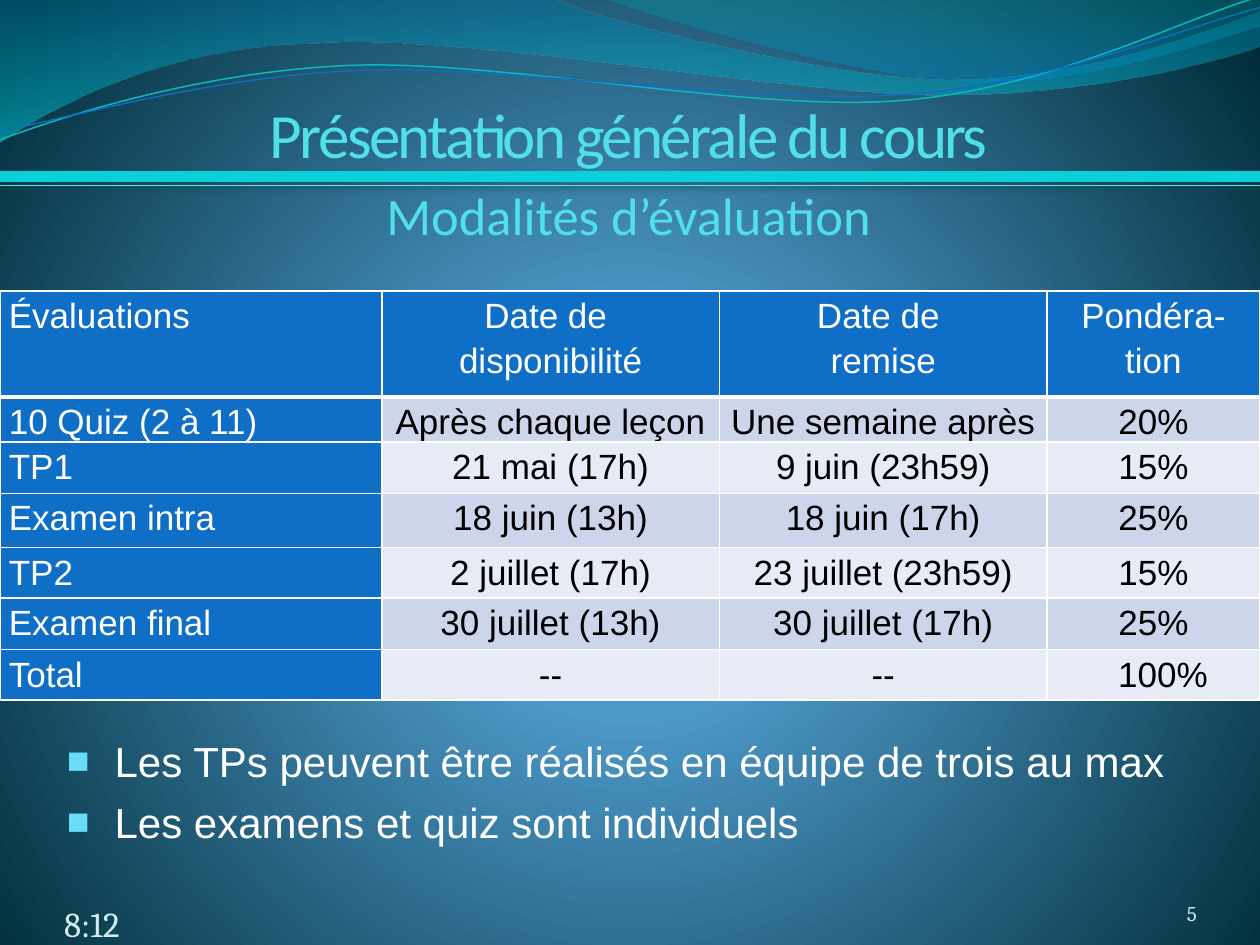
from lxml.etree import SubElement
from pptx import Presentation
from pptx.dml.color import RGBColor
from pptx.enum.shapes import MSO_CONNECTOR
from pptx.enum.text import MSO_ANCHOR, MSO_AUTO_SIZE, PP_ALIGN
from pptx.oxml.ns import qn
from pptx.util import Inches, Pt

WHITE = RGBColor(0xFF, 0xFF, 0xFF)
BLACK = RGBColor(0, 0, 0)
BLUE = RGBColor(0x0F, 0x6F, 0xC6)
BAND_DARK = RGBColor(0xCC, 0xD5, 0xEA)
BAND_LIGHT = RGBColor(0xE7, 0xEB, 0xF5)
HEADING = RGBColor(0x51, 0xE0, 0xEA)
FOOTER = RGBColor(0xD1, 0xEA, 0xEE)
BULLET = RGBColor(0x6B, 0xDB, 0xFA)
TURQUOISE = RGBColor(0x0B, 0xD0, 0xD9)
PALE_TURQUOISE = RGBColor(0x77, 0xD9, 0xE8)
WAVE_TEAL = RGBColor(0x0A, 0xB8, 0xBF)
RULE_SHADOW = RGBColor(0x02, 0x4B, 0x4E)
BACKGROUND = [(0, RGBColor(0x4A, 0xA0, 0xD6), 100), (25, RGBColor(0x4C, 0x98, 0xC7), 100),
              (100, RGBColor(0x00, 0x2C, 0x38), 100)]
LEFT_WAVE = [(0, RGBColor(0x00, 0x74, 0xA1), 45), (100, RGBColor(0x00, 0xC6, 0xCF), 55)]
RIGHT_WAVE = [(0, RGBColor(0x00, 0xA1, 0xA9), 30), (80, RGBColor(0x00, 0x8B, 0xBF), 45)]

ROWS = [
    ["Évaluations", "Date de \ndisponibilité", "Date de \nremise", "Pondéra-tion"],
    ["10 Quiz (2 à 11)", "Après chaque leçon", "Une semaine après", "20%"],
    ["TP1", "21 mai (17h)", "9 juin (23h59)", "15%"],
    ["Examen intra", "18 juin (13h)", "18 juin (17h)", "25%"],
    ["TP2", "2 juillet (17h)", "23 juillet (23h59)", "15%"],
    ["Examen final", "30 juillet (13h)", "30 juillet (17h)", "25%"],
    ["Total", "--", "--", "100%"],
]
COLUMN_WIDTHS = [3.03, 2.68, 2.6, 1.69]
ROW_HEIGHTS = [0.84, 0.35, 0.41, 0.43, 0.4, 0.41, 0.4]
RULES = ["Les TPs peuvent être réalisés en équipe de trois au max",
         "Les examens et quiz sont individuels"]


def add_node(parent, tag, **attributes):
    return SubElement(parent, qn(tag), {key: str(value) for key, value in attributes.items()})


def add_color(parent, color, opacity=100):
    node = add_node(parent, "a:srgbClr", val=color)
    if opacity < 100:
        add_node(node, "a:alpha", val=opacity * 1000)


def set_gradient(owner, element, stops, radial=False):
    """Fill owner with (position, colour, opacity) stops, top to bottom or radial."""
    owner.fill.gradient()
    gradient = element.find(".//" + qn("a:gradFill"))
    for child in list(gradient):
        gradient.remove(child)
    stop_list = add_node(gradient, "a:gsLst")
    for position, color, opacity in stops:
        add_color(add_node(stop_list, "a:gs", pos=position * 1000), color, opacity)
    if radial:
        circle = add_node(gradient, "a:path", path="circle")
        add_node(circle, "a:fillToRect", l=10000, t=110000, r=10000, b=100000)
    else:
        add_node(gradient, "a:lin", ang=5400000, scaled=0)


def add_outline(page, box, steps, close):
    """Draw a start point, then line ends (2 numbers) and cubic curves (6 numbers)."""
    left, top = box[:2]
    points = [(Inches(left + step[i]), Inches(top + step[i + 1]))
              for step in steps for i in range(0, len(step), 2)]
    builder = page.shapes.build_freeform(*points[0])
    builder.add_line_segments(points[1:], close=close)
    shape = builder.convert_to_shape()
    shape.shadow.inherit = False
    segments = iter(shape.element.findall(".//" + qn("a:lnTo")))
    for step in steps[1:]:
        curve = next(segments)
        if len(step) == 6:
            bezier = add_node(curve.getparent(), "a:cubicBezTo")
            curve.addprevious(bezier)
            for segment in (curve, next(segments), next(segments)):
                bezier.append(segment[0])
                segment.getparent().remove(segment)
    return shape


def add_waves(page, box):
    areas = [
        (LEFT_WAVE, [(0, 0), (4.4, -0.01), (4.76, 0.17, 6.64, 0.63, 7.58, 0.63),
                     (8.53, 0.63, 9.58, 0.26, 10, 0.09), (10.01, 0.36),
                     (9.83, 0.44, 8.7, 0.76, 7.46, 0.75), (6.22, 0.75, 3.82, 0.28, 2.57, 0.34),
                     (1.29, 0.36, 0.46, 0.83, -0.01, 1.13)]),
        (RIGHT_WAVE, [(4.79, -0.01), (5.09, 0.11, 6.82, 0.62, 7.69, 0.65),
                      (8.56, 0.69, 9.61, 0.32, 10, 0.21), (10, 0)]),
    ]
    for stops, steps in areas:
        shape = add_outline(page, box, steps, True)
        set_gradient(shape, shape.element, stops)
        shape.line.fill.background()
    strands = [
        (WAVE_TEAL, 0.85, [(0, 1.11), (0.48, 0.93, 1.58, 0.57, 2.77, 0.52),
                           (3.95, 0.47, 5.93, 0.89, 7.13, 0.8),
                           (8.33, 0.71, 9.38, 0.15, 9.98, -0.02)]),
        (BLUE, 0.75, [(0, 1.04), (0.47, 0.96, 1.64, 0.61, 2.83, 0.56),
                      (4.03, 0.51, 5.97, 0.84, 7.17, 0.75),
                      (8.36, 0.67, 9.41, 0.21, 10, 0.06)]),
    ]
    for color, width, steps in strands:
        shape = add_outline(page, box, steps, False)
        shape.fill.background()
        shape.line.color.rgb = color
        shape.line.width = Pt(width)


def add_rule(page, box, color, width, shadow=False):
    left, top, length = box
    line = page.shapes.add_connector(MSO_CONNECTOR.STRAIGHT, Inches(left), Inches(top),
                                     Inches(left + length), Inches(top))
    line.line.color.rgb = color
    line.line.width = Pt(width)
    effects = add_node(line.element.spPr, "a:effectLst")
    if shadow:
        outer = add_node(effects, "a:outerShdw", blurRad=Pt(4.5), dist=Pt(3), dir=5400000)
        add_color(outer, RULE_SHADOW, 48)


def place(shape, box, **frame_format):
    for name, value in zip(("left", "top", "width", "height"), box):
        setattr(shape, name, Inches(value))
    values = {"word_wrap": True, "auto_size": MSO_AUTO_SIZE.NONE, **frame_format}
    for name, value in values.items():
        setattr(shape.text_frame, name, value)


def style(para, font, size, color, **para_format):
    for span in para.runs:
        for name, value in {"name": font, "size": Pt(size), "bold": False}.items():
            setattr(span.font, name, value)
        span.font.color.rgb = color
    for name, value in para_format.items():
        setattr(para, name, value)


def add_label(shape, box, text, font, size, color, align, right=0):
    """Write one bottom-anchored line in a text box or title placeholder."""
    place(shape, box, vertical_anchor=MSO_ANCHOR.BOTTOM, margin_left=0, margin_top=0,
          margin_right=Inches(right), margin_bottom=0)
    para = shape.text_frame.paragraphs[0]
    span = para.add_run()
    span.text = text
    style(para, font, size, color, alignment=align)
    return span


def add_text_box(page):
    return page.shapes.add_textbox(0, 0, 0, 0)


def fill_list(body, box, items):
    place(body, box, vertical_anchor=MSO_ANCHOR.BOTTOM, margin_bottom=Inches(0.39))
    body.text_frame.text = "\n".join(items)
    for index, para in enumerate(body.text_frame.paragraphs):
        style(para, "Arial", 24, WHITE, space_before=Pt(6 if index else 0))
        properties = para._p.get_or_add_pPr()
        properties.set("marL", str(Inches(0.38)))
        properties.set("indent", str(Inches(-0.38)))
        add_color(add_node(properties, "a:buClr"), BULLET)
        add_node(properties, "a:buSzPct", val=90000)
        add_node(properties, "a:buFont", typeface="Arial")
        add_node(properties, "a:buChar", char="■")


def set_borders(cell, row):
    properties = cell._tc.get_or_add_tcPr()
    widths = {"L": 1, "R": 1, "T": 3 if row == 1 else 1, "B": 3 if row == 0 else 1}
    for index, (side, width) in enumerate(widths.items()):
        border = add_node(properties, "a:ln" + side, w=Pt(width))
        add_color(add_node(border, "a:solidFill"), WHITE)
        properties.insert(index, border)


def add_schedule(page, box):
    table = page.shapes.add_table(len(ROWS), len(COLUMN_WIDTHS), *map(Inches, box)).table
    for column, width in zip(table.columns, COLUMN_WIDTHS):
        column.width = Inches(width)
    for r, (height, texts) in enumerate(zip(ROW_HEIGHTS, ROWS)):
        table.rows[r].height = Inches(height)
        for c, text in enumerate(texts):
            cell = table.cell(r, c)
            cell.text = text
            heading = r == 0 or c == 0
            indent = 0.15 if text == "100%" else 0
            margins = {"margin_left": Inches(0.07 + indent), "margin_right": Inches(0.07),
                       "margin_top": 0, "margin_bottom": 0}
            for name, value in margins.items():
                setattr(cell, name, value)
            cell.fill.solid()
            cell.fill.fore_color.rgb = BLUE if heading else BAND_DARK if r % 2 else BAND_LIGHT
            for para in cell.text_frame.paragraphs:
                style(para, "Arial", 20, WHITE if heading else BLACK, line_spacing=1.15,
                      alignment=PP_ALIGN.CENTER if c else PP_ALIGN.LEFT)
            set_borders(cell, r)


def main():
    deck = Presentation()
    deck.slide_width, deck.slide_height = Inches(10), Inches(7.5)
    page = deck.slides.add_slide(deck.slide_layouts[1])
    set_gradient(page.background, page.element, BACKGROUND, radial=True)
    add_waves(page, (0, 0, 10, 1.14))
    fill_list(page.placeholders[1], (0.43, 2.25, 9.21, 4.86), RULES)
    add_label(add_text_box(page), (8.67, 6.95, 0.83, 0.4), "5", "Cambria", 12, FOOTER,
              PP_ALIGN.RIGHT)
    add_label(add_text_box(page), (0.51, 7.1, 2.33, 0.4), "8:12", "Cambria", 20, FOOTER,
              PP_ALIGN.LEFT)
    title = add_label(page.shapes.title, (0, 0.64, 10, 0.72), "Présentation générale du cours",
                      "Calibri", 36, HEADING, PP_ALIGN.CENTER, right=0.02)
    title._r.get_or_add_rPr().set("spc", "-150")
    add_rule(page, (0, 1.4, 10), TURQUOISE, 6, shadow=True)
    add_rule(page, (0, 1.47, 10), PALE_TURQUOISE, 0.75)
    add_label(add_text_box(page), (0, 1.23, 10, 0.72), "Modalités d’évaluation",
              "Calibri", 30, HEADING, PP_ALIGN.CENTER, right=0.02)
    add_schedule(page, (0, 2.31, 10, sum(ROW_HEIGHTS)))
    deck.save("out.pptx")


if __name__ == "__main__":
    main()
